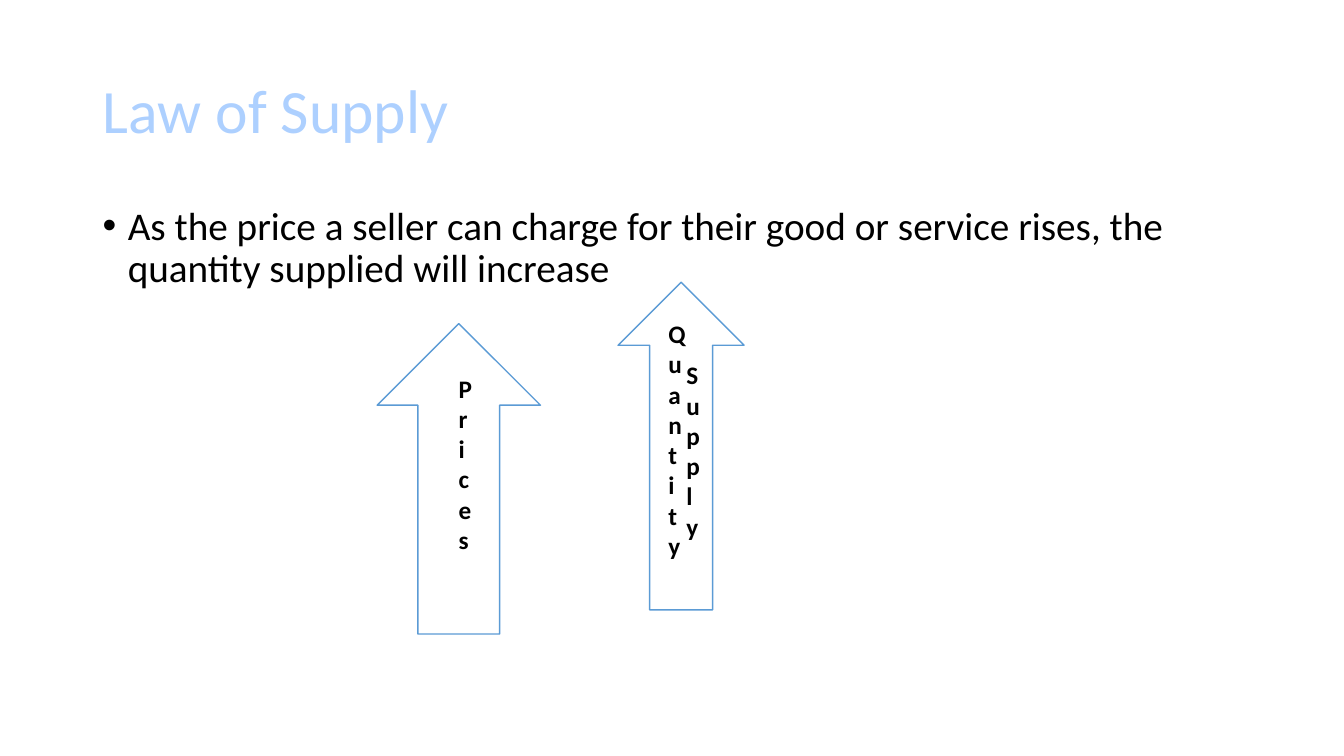
from dataclasses import dataclass

from lxml.etree import SubElement
from pptx import Presentation
from pptx.dml.color import RGBColor
from pptx.enum.shapes import MSO_SHAPE
from pptx.enum.text import MSO_ANCHOR, MSO_AUTO_SIZE, PP_ALIGN
from pptx.oxml.ns import qn
from pptx.shapes.base import BaseShape
from pptx.slide import Slide
from pptx.text.text import _Paragraph
from pptx.util import Pt

EMU_PER_PX = 9144
FONT = "Calibri"
COLORS = {
    "title": "ADD0FF",
    "text": "000000",
    "arrow_fill": "FFFFFF",
    "arrow_line": "5B9BD5",
}


@dataclass(frozen=True)
class Box:
    left: int
    top: int
    width: int
    height: int

    def emu(self) -> tuple[int, int, int, int]:
        return (px(self.left), px(self.top), px(self.width), px(self.height))


@dataclass(frozen=True)
class Arrow:
    preset: MSO_SHAPE
    box: Box
    rotation: int


@dataclass(frozen=True)
class VerticalWord:
    text: str
    box: Box


TITLE_BOX = Box(92, 40, 1150, 145)
BODY_BOX = Box(92, 200, 1150, 476)
ARROWS = [
    Arrow(MSO_SHAPE.UP_ARROW, Box(374, 321, 162, 308), 0),
    Arrow(MSO_SHAPE.DOWN_ARROW, Box(613, 280, 125, 325), 180),
]
VERTICAL_WORDS = [
    VerticalWord("Prices", Box(445, 365, 21, 192)),
    VerticalWord("Supply", Box(671, 352, 21, 192)),
    VerticalWord("Quantity", Box(653, 311, 21, 252)),
]


def px(length: int) -> int:
    return length * EMU_PER_PX


def color(name: str) -> RGBColor:
    return RGBColor.from_string(COLORS[name])


def add_run(paragraph: _Paragraph, text: str, size: int, color_name: str, bold: bool = False) -> None:
    run = paragraph.add_run()
    run.text = text
    run.font.name = FONT
    run.font.size = Pt(size)
    run.font.bold = bold
    run.font.color.rgb = color(color_name)


def add_bullet(paragraph: _Paragraph, indent: int) -> None:
    properties = paragraph._p.get_or_add_pPr()
    properties.set("marL", str(px(indent)))
    properties.set("indent", str(-px(indent)))
    SubElement(properties, qn("a:buFont"), typeface="Arial")
    SubElement(properties, qn("a:buChar"), char="•")


def add_text_box(slide: Slide, box: Box) -> BaseShape:
    shape = slide.shapes.add_textbox(*box.emu())
    shape.text_frame.word_wrap = True
    return shape


def format_title(slide: Slide) -> None:
    title = slide.shapes.title
    title.left, title.top, title.width, title.height = TITLE_BOX.emu()
    frame = title.text_frame
    frame.vertical_anchor = MSO_ANCHOR.MIDDLE
    frame.auto_size = MSO_AUTO_SIZE.NONE
    paragraph = frame.paragraphs[0]
    paragraph.alignment = PP_ALIGN.LEFT
    paragraph.line_spacing = 0.9
    add_run(paragraph, "Law of Supply", 44, "title")


def add_body(slide: Slide) -> None:
    paragraph = add_text_box(slide, BODY_BOX).text_frame.paragraphs[0]
    paragraph.line_spacing = 0.9
    paragraph.space_before = Pt(10)
    add_bullet(paragraph, 25)
    add_run(
        paragraph,
        "As the price a seller can charge for their good or service rises, "
        "the quantity supplied will increase",
        28,
        "text",
    )


def add_arrow(slide: Slide, arrow: Arrow) -> None:
    shape = slide.shapes.add_shape(arrow.preset, *arrow.box.emu())
    shape.rotation = arrow.rotation
    shape.shadow.inherit = False
    shape.fill.solid()
    shape.fill.fore_color.rgb = color("arrow_fill")
    shape.line.color.rgb = color("arrow_line")
    shape.line.width = Pt(1)


def add_vertical_word(slide: Slide, word: VerticalWord) -> None:
    frame = add_text_box(slide, word.box).text_frame
    frame.auto_size = MSO_AUTO_SIZE.SHAPE_TO_FIT_TEXT
    add_run(frame.paragraphs[0], word.text, 18, "text", bold=True)


def main() -> None:
    presentation = Presentation()
    presentation.slide_width = px(1333)
    presentation.slide_height = px(750)
    title_only = presentation.slide_layouts.get_by_name("Title Only")
    slide = presentation.slides.add_slide(title_only)
    format_title(slide)
    add_body(slide)
    for arrow in ARROWS:
        add_arrow(slide, arrow)
    for word in VERTICAL_WORDS:
        add_vertical_word(slide, word)
    presentation.save("out.pptx")


if __name__ == "__main__":
    main()
